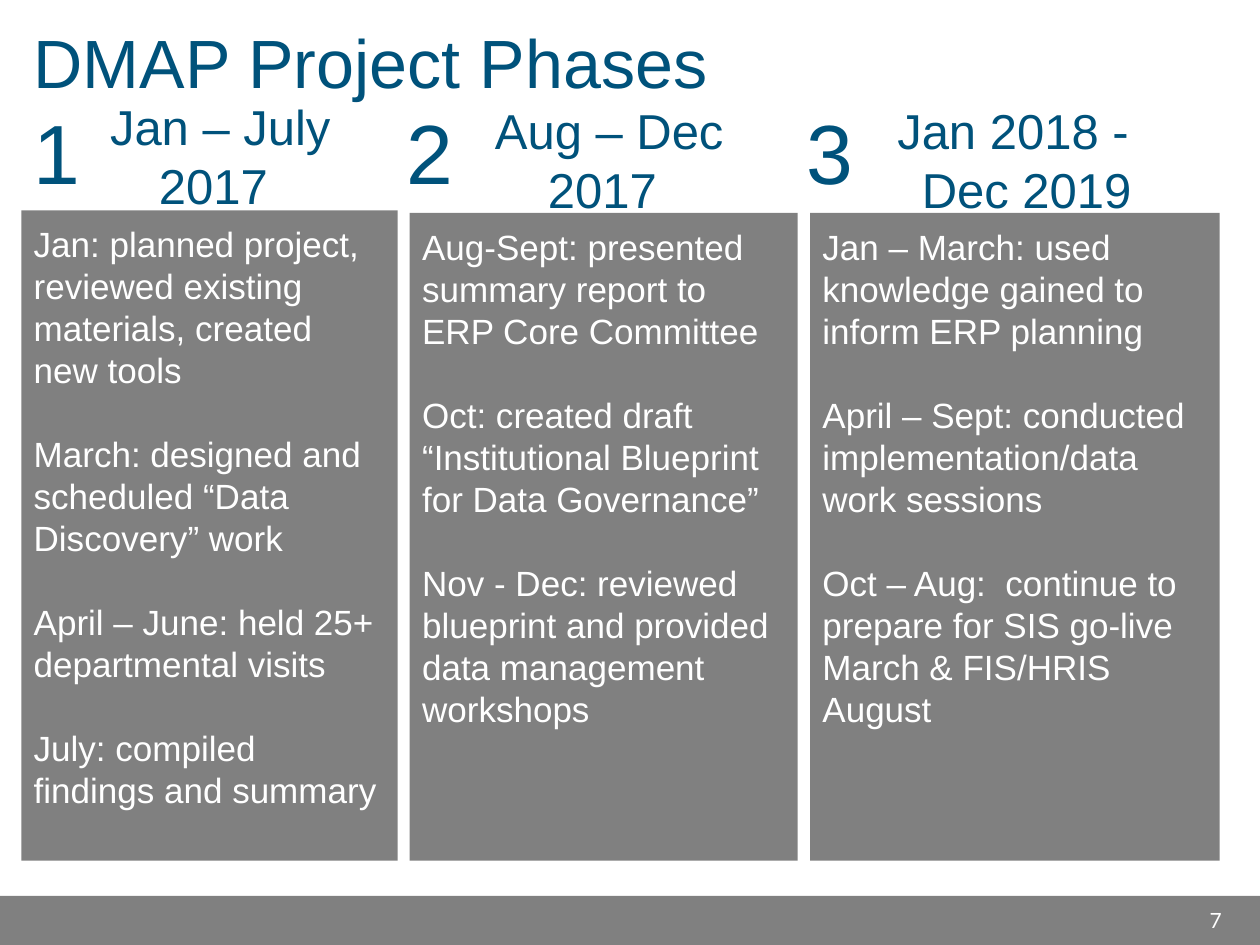
from dataclasses import dataclass

from pptx import Presentation
from pptx.dml.color import RGBColor
from pptx.enum.shapes import MSO_SHAPE as Shape
from pptx.enum.text import MSO_ANCHOR as Anchor, PP_ALIGN as Align
from pptx.util import Cm, Pt


@dataclass(frozen=True)
class Theme:
    blue: RGBColor = RGBColor(0x00, 0x52, 0x7B)
    gray: RGBColor = RGBColor(0x80, 0x80, 0x80)
    white: RGBColor = RGBColor(0xFF, 0xFF, 0xFF)
    font: str = "Arial"
    page_font: str = "Lato"
    title: int = 39
    number: int = 48
    period: int = 28
    body: int = 20
    page: int = 12


theme = Theme()
deck = Presentation()
deck.slide_width, deck.slide_height = Cm(25.4), Cm(19.05)
slide = deck.slides.add_slide(deck.slide_layouts[6])


def write(frame, lines, size, color, align=Align.LEFT, font=theme.font, gap=0):
    frame.word_wrap = True
    for index, line in enumerate(lines):
        paragraph = frame.add_paragraph() if index else frame.paragraphs[0]
        paragraph.text = line
        paragraph.alignment = align
        paragraph.space_before = Pt(gap if index else 0)
        paragraph.font.name = font
        paragraph.font.size = Pt(size)
        paragraph.font.color.rgb = color


def gray_block(left, top, width, height):
    block = slide.shapes.add_shape(Shape.RECTANGLE, Cm(left), Cm(top), Cm(width), Cm(height))
    block.shadow.inherit = False
    block.fill.solid()
    block.fill.fore_color.rgb = theme.gray
    block.line.fill.background()
    return block


# Title
title = slide.shapes.add_textbox(Cm(0.43), Cm(0.28), Cm(24.33), Cm(1.85))
write(title.text_frame, ["DMAP Project Phases"], theme.title, theme.blue)

# Footer band and page number
gray_block(0, 18.06, 25.4, 0.99)
page = slide.shapes.add_textbox(Cm(23.62), Cm(18.03), Cm(1.78), Cm(1.02))
page.text_frame.vertical_anchor = Anchor.MIDDLE
write(page.text_frame, ["7"], theme.page, theme.white, Align.CENTER, theme.page_font)

# Phases: number (left, width), period (left, top, width), panel (left, top, width)
phases = [
    ((0.43, 1.27), "Jan – July 2017 ", (1.9, 1.83, 5.08), (0.43, 4.24, 7.59), [
        "Jan: planned project, reviewed existing materials, created new tools",
        "March: designed and scheduled “Data Discovery” work",
        "April – June: held 25+ departmental visits",
        "July: compiled findings and summary",
    ]),
    ((7.82, 1.7), "Aug – Dec 2017 ", (9.32, 1.9, 5.92), (8.26, 4.29, 7.82), [
        "Aug-Sept: presented summary report to  ERP Core Committee",
        "Oct: created draft “Institutional Blueprint for Data Governance”",
        "Nov - Dec: reviewed blueprint and provided data management workshops",
    ]),
    ((15.67, 2.11), "Jan 2018 -   Dec 2019", (17.78, 1.9, 5.28), (16.33, 4.29, 8.26), [
        "Jan – March: used knowledge gained to inform ERP planning",
        "April – Sept: conducted implementation/data  work sessions",
        "Oct – Aug:  continue to prepare for SIS go-live March & FIS/HRIS August",
    ]),
]
panel_bottom = 17.35

for order, (number_place, period, period_place, panel_place, steps) in enumerate(phases, 1):
    left, width = number_place
    number = slide.shapes.add_textbox(Cm(left), Cm(1.9), Cm(width), Cm(2.31))
    write(number.text_frame, [str(order)], theme.number, theme.blue, Align.CENTER)

    left, top, width = panel_place
    panel = gray_block(left, top, width, panel_bottom - top)
    panel.text_frame.vertical_anchor = Anchor.TOP
    panel.text_frame.margin_top = Cm(0.25)
    write(panel.text_frame, steps, theme.body, theme.white, gap=24)

    left, top, width = period_place
    heading = slide.shapes.add_textbox(Cm(left), Cm(top), Cm(width), Cm(2.64))
    write(heading.text_frame, [period], theme.period, theme.blue, Align.CENTER)

deck.save("out.pptx")
